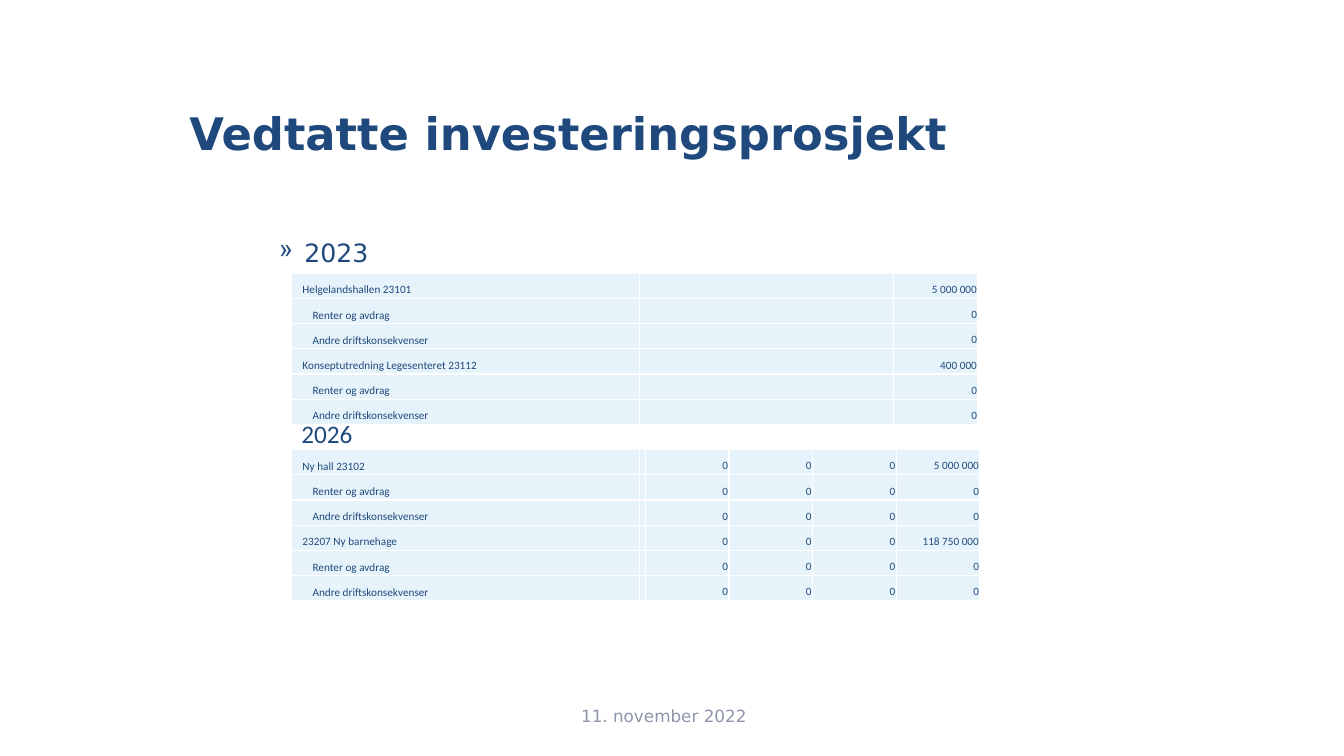
from lxml import etree
from pptx import Presentation
from pptx.dml.color import RGBColor
from pptx.enum.text import MSO_ANCHOR, MSO_AUTO_SIZE, PP_ALIGN
from pptx.oxml.ns import qn
from pptx.util import Inches, Pt

LEFT, CENTER, RIGHT = PP_ALIGN.LEFT, PP_ALIGN.CENTER, PP_ALIGN.RIGHT
TOP, MIDDLE = MSO_ANCHOR.TOP, MSO_ANCHOR.MIDDLE
GROW = MSO_AUTO_SIZE.SHAPE_TO_FIT_TEXT

CELL_INSET = 0.01
LEVEL_INDENT = 0.1
ROW_HEIGHT = 0.25


def color(value):
    return RGBColor.from_string(value)


def write(paragraph, text, size=18, font="DejaVu Sans", ink="1F497D",
          bold=False, align=LEFT, spacing=None):
    paragraph.alignment = align
    if spacing:
        paragraph.line_spacing = Pt(spacing)
    # Empty cells keep the size too, so that their rows stay low
    paragraph.font.size = Pt(size)
    if text:
        run = paragraph.add_run()
        run.text = text
        run.font.size = Pt(size)
        run.font.name = font
        run.font.bold = bold
        run.font.color.rgb = color(ink)


class BudgetSlide:
    CELL_FILL = "E7F3FA"
    GRID = "FFFFFF"

    def __init__(self, presentation):
        self.slide = presentation.slides.add_slide(presentation.slide_layouts[6])

    def text(self, text, left, top, width, height, anchor=TOP, inset_top=0.05,
             bullet=None, grow=False, **style):
        shape = self.slide.shapes.add_textbox(
            Inches(left), Inches(top), Inches(width), Inches(height))
        frame = shape.text_frame
        frame.word_wrap = True
        frame.vertical_anchor = anchor
        frame.margin_top = Inches(inset_top)
        if grow:
            frame.auto_size = GROW
        paragraph = frame.paragraphs[0]
        if bullet:
            properties = paragraph._p.get_or_add_pPr()
            properties.set("marL", str(Inches(2.25)))
            properties.set("indent", str(Inches(-0.25)))
            etree.SubElement(properties, qn("a:buChar")).set("char", bullet)
        write(paragraph, text, **style)

    def table(self, left, top, widths, projects):
        # Each project has one amount row and two rows of zero consequences
        rows = []
        for name, amounts in projects:
            zeros = ["0"] * len(amounts)
            rows += [(1, name, amounts),
                     (2, "Renter og avdrag", zeros),
                     (2, "Andre driftskonsekvenser", zeros)]
        table = self.slide.shapes.add_table(
            len(rows), len(widths), Inches(left), Inches(top),
            Inches(sum(widths)), Inches(ROW_HEIGHT * len(rows))).table
        table.first_row = table.horz_banding = False
        for column, width in zip(table.columns, widths):
            column.width = Inches(width)
        for row_index, (level, label, amounts) in enumerate(rows):
            table.rows[row_index].height = Inches(ROW_HEIGHT)
            for column_index, value in enumerate([label, "", *amounts]):
                self.cell(table.cell(row_index, column_index), value,
                          0 if column_index else level)

    def cell(self, cell, value, level):
        cell.margin_left = Inches(CELL_INSET + LEVEL_INDENT * level)
        cell.margin_right = cell.margin_top = cell.margin_bottom = Inches(CELL_INSET)
        cell.vertical_anchor = MIDDLE if level else TOP
        properties = cell._tc.get_or_add_tcPr()
        for side in ("a:lnL", "a:lnR", "a:lnT", "a:lnB"):
            line = etree.SubElement(properties, qn(side), w=str(Pt(1)))
            fill = etree.SubElement(line, qn("a:solidFill"))
            etree.SubElement(fill, qn("a:srgbClr"), val=self.GRID)
        cell.fill.solid()
        cell.fill.fore_color.rgb = color(self.CELL_FILL)
        write(cell.text_frame.paragraphs[0], value, size=8, font="Calibri",
              align=LEFT if level else RIGHT, spacing=16)


def main():
    presentation = Presentation()
    presentation.slide_width = Inches(13.33)
    presentation.slide_height = Inches(7.5)
    budget = BudgetSlide(presentation)

    # Title, first year and date
    budget.text("Vedtatte investeringsprosjekt ", 0.67, 0.69, 10.09, 1.25,
                anchor=MIDDLE, size=32, bold=True, align=CENTER)
    budget.text("2023", 0.67, 1.94, 12.3, 4.76, inset_top=0.41, bullet="»")
    budget.text("11. november 2022", 5.03, 6.9, 3.11, 0.4,
                anchor=MIDDLE, size=12, ink="8D95AA", align=CENTER)

    # Projects of 2023
    budget.table(2.89, 2.71, [3.45, 2.52, 0.84], [
        ("Helgelandshallen 23101", ["5 000 000"]),
        ("Konseptutredning Legesenteret 23112", ["400 000"]),
    ])

    # Projects of 2026, with one column for each year from 2023
    budget.table(2.89, 4.46, [3.45, 0.06] + [0.83] * 4, [
        ("Ny hall 23102", ["0", "0", "0", "5 000 000"]),
        ("23207 Ny barnehage", ["0", "0", "0", "118 750 000"]),
    ])
    budget.text("2026", 2.89, 4.1, 0.87, 0.4, grow=True, font="Calibri")

    presentation.save("out.pptx")


if __name__ == "__main__":
    main()
